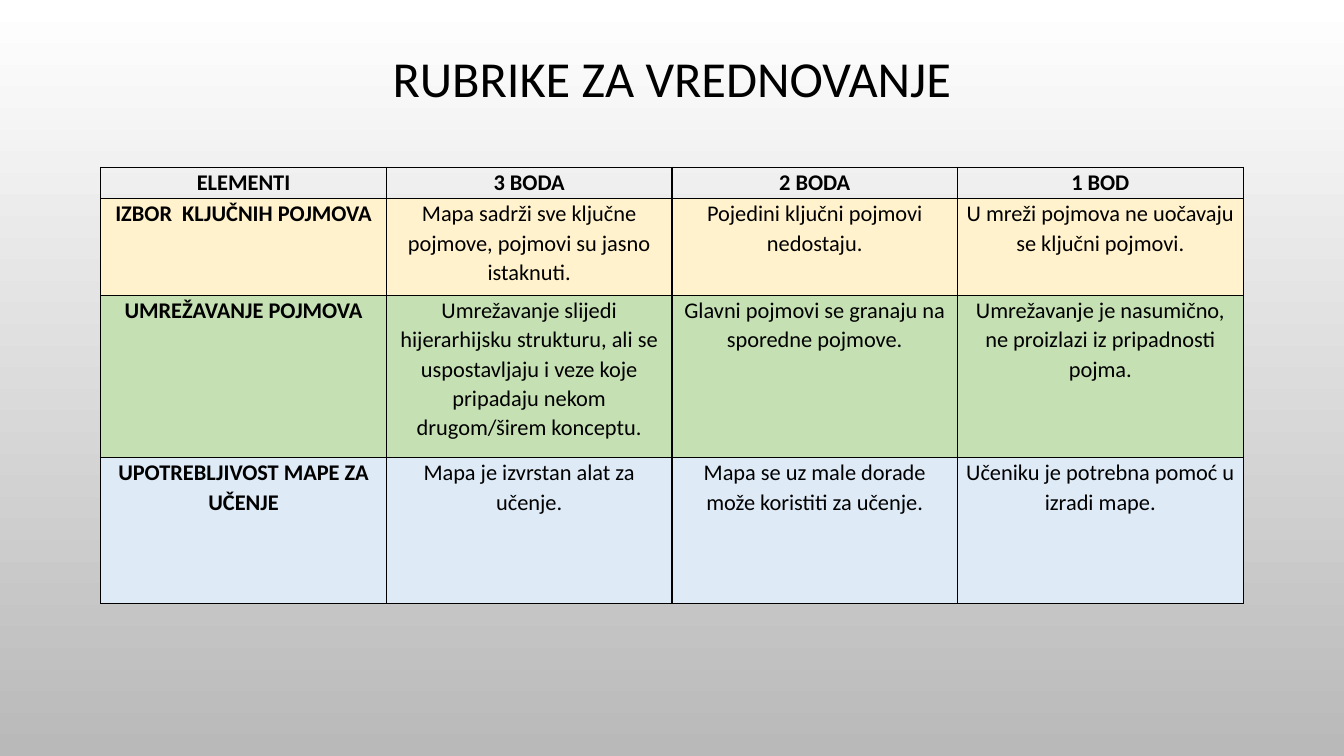
from lxml.etree import SubElement
from pptx import Presentation
from pptx.dml.color import RGBColor
from pptx.enum.text import MSO_ANCHOR, PP_ALIGN
from pptx.oxml.ns import qn
from pptx.util import Inches, Pt

BLACK = RGBColor(0x00, 0x00, 0x00)
WHITE = RGBColor(0xFF, 0xFF, 0xFF)
GRAY = RGBColor(0xB9, 0xB9, 0xB9)
CREAM = RGBColor(0xFF, 0xF2, 0xCC)
GREEN = RGBColor(0xC5, 0xE0, 0xB3)
BLUE = RGBColor(0xDE, 0xEA, 0xF6)

FONT = "Calibri"
WIDE, HIGH = 13.33, 7.5
LEFT, SPAN = 1, 11.33

RUBRIC = [
    (0.31, None, ["ELEMENTI", "3 BODA", "2 BODA", "1 BOD"]),
    (0.96, CREAM, [
        "IZBOR  KLJUČNIH POJMOVA",
        "Mapa sadrži sve ključne pojmove, pojmovi su jasno istaknuti.",
        "Pojedini ključni pojmovi nedostaju.",
        "U mreži pojmova ne uočavaju se ključni pojmovi."]),
    (1.61, GREEN, [
        "UMREŽAVANJE POJMOVA",
        "Umrežavanje slijedi hijerarhijsku strukturu, ali se uspostavljaju "
        "i veze koje pripadaju nekom drugom/širem konceptu.",
        "Glavni pojmovi se granaju na sporedne pojmove.",
        "Umrežavanje je nasumično, ne proizlazi iz pripadnosti pojma."]),
    (1.45, BLUE, [
        "UPOTREBLJIVOST MAPE ZA UČENJE",
        "Mapa je izvrstan alat za učenje.",
        "Mapa se uz male dorade može koristiti za učenje.",
        "Učeniku je potrebna pomoć u izradi mape."]),
]


def write(frame, text, size, space, bold=False):
    """Put one centred run of text in the frame."""
    para = frame.paragraphs[0]
    para.alignment = PP_ALIGN.CENTER
    para.line_spacing = space
    run = para.add_run()
    run.text = text
    run.font.name = FONT
    run.font.size = Pt(size)
    run.font.bold = bold
    run.font.color.rgb = BLACK


def paint(slide):
    """Fill the background with a gradient from top to bottom."""
    fill = slide.background.fill
    fill.gradient()
    fill.gradient_angle = 270
    for stop, color in zip(fill.gradient_stops, (WHITE, GRAY)):
        stop.color.rgb = color


def add_title(slide, left, top, width, height):
    """Add the heading, centred in its box."""
    box = slide.shapes.add_textbox(*map(Inches, (left, top, width, height)))
    frame = box.text_frame
    frame.word_wrap = True
    frame.vertical_anchor = MSO_ANCHOR.MIDDLE
    write(frame, "RUBRIKE ZA VREDNOVANJE", 36, 0.9)


def frame_cell(cell):
    """Draw a thin black line on each side of the cell."""
    props = cell._tc.get_or_add_tcPr()
    for spot, side in enumerate(("a:lnL", "a:lnR", "a:lnT", "a:lnB")):
        line = SubElement(props, qn(side), w=str(Pt(1)))
        solid = SubElement(line, qn("a:solidFill"))
        SubElement(solid, qn("a:srgbClr"), val=str(BLACK))
        props.insert(spot, line)


def style_cell(cell, text, color, bold):
    """Set the margins, fill, text and border of one cell."""
    cell.margin_left = cell.margin_right = Inches(0.07)
    cell.margin_top = cell.margin_bottom = 0
    if color is None:
        cell.fill.background()
    else:
        cell.fill.solid()
        cell.fill.fore_color.rgb = color
    write(cell.text_frame, text, 16, 1.07, bold)
    frame_cell(cell)


def add_rubric(slide, left, top, width):
    """Add the grading table with equal columns."""
    count = len(RUBRIC[0][2])
    height = sum(row[0] for row in RUBRIC)
    box = map(Inches, (left, top, width, height))
    table = slide.shapes.add_table(len(RUBRIC), count, *box).table
    table.first_row = table.horz_banding = False
    for col in table.columns:
        col.width = Inches(width / count)
    for i, (tall, color, texts) in enumerate(RUBRIC):
        table.rows[i].height = Inches(tall)
        for j, text in enumerate(texts):
            style_cell(table.cell(i, j), text, color, i == 0 or j == 0)


def main():
    """Build the slide and save it."""
    deck = Presentation()
    deck.slide_width, deck.slide_height = Inches(WIDE), Inches(HIGH)
    slide = deck.slides.add_slide(deck.slide_layouts[6])
    paint(slide)
    add_title(slide, LEFT, 0.18, SPAN, 1.25)
    add_rubric(slide, LEFT, 1.66, SPAN)
    deck.save("out.pptx")


if __name__ == "__main__":
    main()
